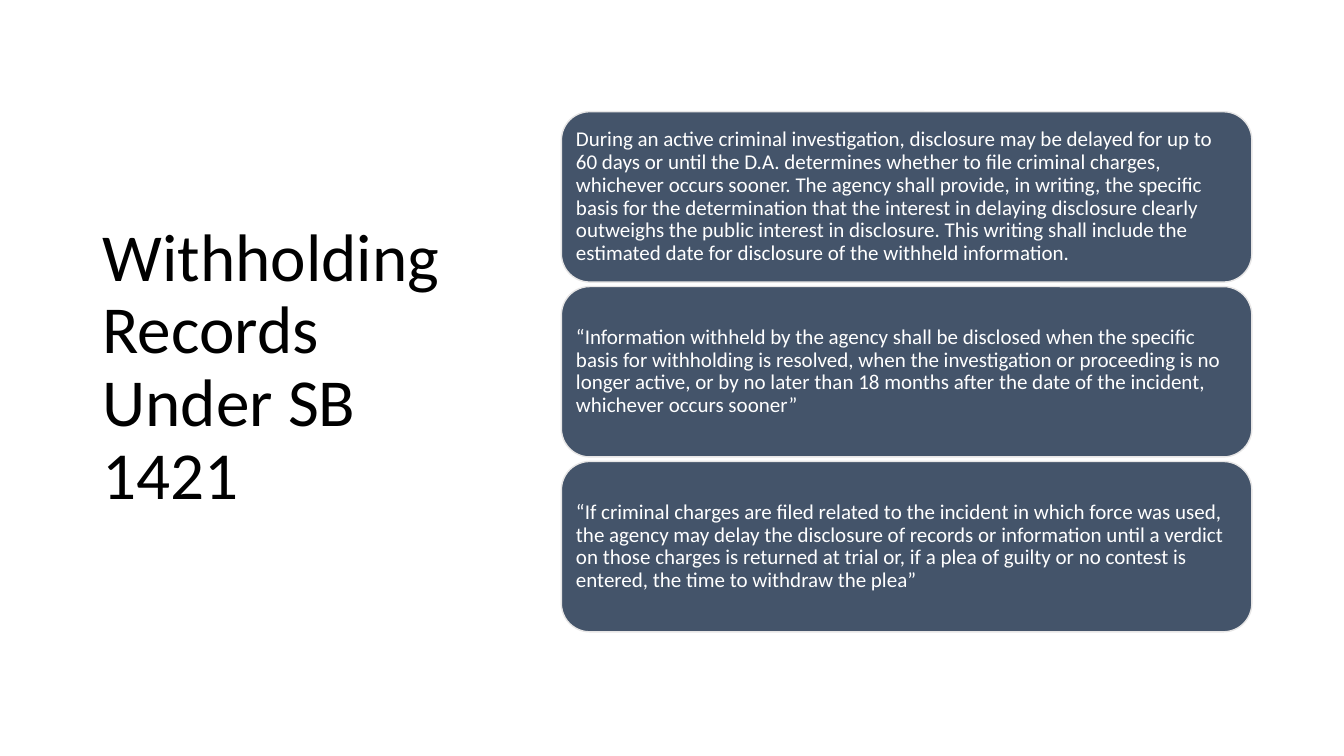
from dataclasses import dataclass

from pptx import Presentation
from pptx import util as u
from pptx.dml.color import RGBColor
from pptx.enum import shapes, text

COLOURS = {"title": "000000", "card": "44546A", "outline": "E7E6E6", "card_text": "FFFFFF"}
FONT = "Calibri"
CARD_LEFT, CARD_TOP = 401, 79.8
CARD_WIDTH, CARD_HEIGHT, CARD_GAP = 493.2, 121.7, 3.2


@dataclass(frozen=True)
class Card:
    row: int
    words: str


CARDS = [
    Card(
        0,
        "During an active criminal investigation, disclosure may be delayed for up to "
        "60 days or until the D.A. determines whether to file criminal charges, "
        "whichever occurs sooner. The agency shall provide, in writing, the specific "
        "basis for the determination that the interest in delaying disclosure clearly "
        "outweighs the public interest in disclosure. This writing shall include the "
        "estimated date for disclosure of the withheld information.",
    ),
    Card(
        1,
        "“Information withheld by the agency shall be disclosed when the specific "
        "basis for withholding is resolved, when the investigation or proceeding is no "
        "longer active, or by no later than 18 months after the date of the incident, "
        "whichever occurs sooner”",
    ),
    Card(
        2,
        "“If criminal charges are filed related to the incident in which force was used, "
        "the agency may delay the disclosure of records or information until a verdict "
        "on those charges is returned at trial or, if a plea of guilty or no contest is "
        "entered, the time to withdraw the plea”",
    ),
]


def colour(name: str) -> RGBColor:
    return RGBColor.from_string(COLOURS[name])


def write(box, words: str, *, size: float, ink: str,
          inset_x: float = 7.2, inset_y: float = 3.6) -> None:
    frame = box.text_frame
    frame.word_wrap = True
    frame.vertical_anchor = text.MSO_ANCHOR.MIDDLE
    frame.margin_left = frame.margin_right = u.Pt(inset_x)
    frame.margin_top = frame.margin_bottom = u.Pt(inset_y)
    para = frame.paragraphs[0]
    para.alignment = text.PP_ALIGN.LEFT
    para.line_spacing = 0.9
    span = para.add_run()
    span.text = words
    span.font.name = FONT
    span.font.size = u.Pt(size)
    span.font.color.rgb = colour(ink)


def draw_card(page, card: Card) -> None:
    top = CARD_TOP + card.row * (CARD_HEIGHT + CARD_GAP)
    box = page.shapes.add_shape(
        shapes.MSO_SHAPE.ROUNDED_RECTANGLE,
        u.Pt(CARD_LEFT), u.Pt(top), u.Pt(CARD_WIDTH), u.Pt(CARD_HEIGHT),
    )
    box.shadow.inherit = False
    box.fill.solid()
    box.fill.fore_color.rgb = colour("card")
    box.line.color.rgb = colour("outline")
    box.line.width = u.Pt(1)
    write(box, card.words, size=15, ink="card_text", inset_x=4.5, inset_y=4.5)


def main() -> None:
    deck = Presentation()
    deck.slide_width, deck.slide_height = u.Pt(960), u.Pt(540)
    page = deck.slides.add_slide(deck.slide_layouts[6])
    title = page.shapes.add_textbox(u.Pt(66.2), u.Pt(43.9), u.Pt(265.7), u.Pt(438.5))
    write(title, "Withholding Records Under SB 1421", size=48, ink="title")
    for card in CARDS:
        draw_card(page, card)
    deck.save("out.pptx")


if __name__ == "__main__":
    main()
